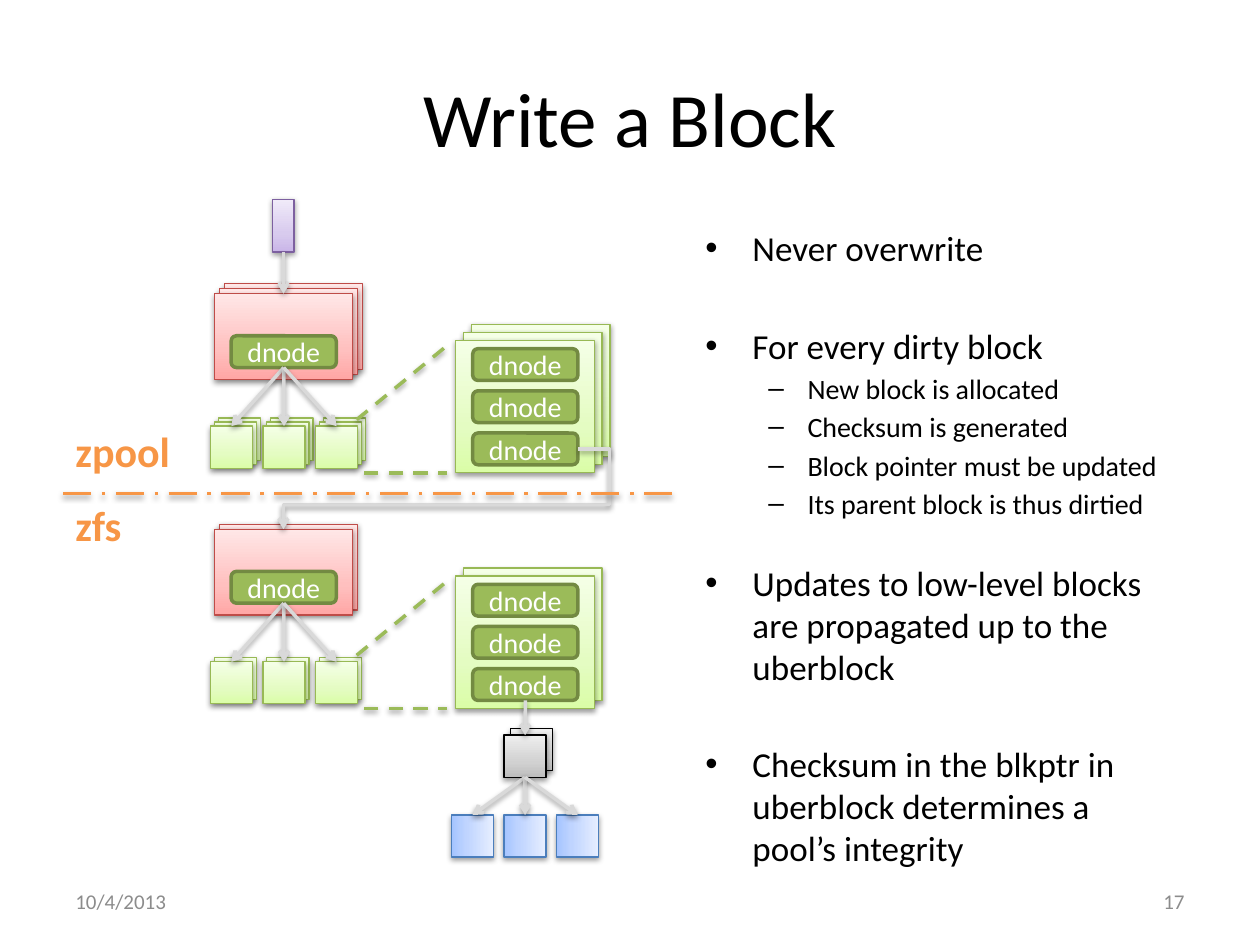
from dataclasses import dataclass

from lxml import etree
from pptx import Presentation
from pptx import util as u
from pptx.dml.color import RGBColor
from pptx.enum import dml, shapes, text
from pptx.oxml import ns


@dataclass(frozen=True)
class Theme:
    """Colours as stops, outline and angle, with type sizes in points."""
    font: str = "Calibri"
    ink: str = "000000"
    white: str = "FFFFFF"
    mute: str = "8C8C8C"
    green: str = "9BBB59"
    rim: str = "738A42"
    arrow: str = "D9D9D9"
    accent: str = "F79646"
    red: tuple = ("FFA6A5", "FFC0BF", "FFE7E7", "BF4C48", 270)
    lime: tuple = ("DAFDA7", "E4FCC2", "F5FFE7", "98B955", 270)
    gray: tuple = ("BDBDBD", "D1D1D1", "EEEEEE", "000000", 270)
    plum: tuple = ("C9B5E8", "D8CBEE", "F0EAF9", "7D60A0", 270)
    blue: tuple = ("A4C4FF", "BFD4FF", "E6EEFF", "4B7EBC", 0)
    title: int = 44
    label: int = 24
    body: int = 20
    small: int = 16
    foot: int = 12


T = Theme()
SIDE = 0.85
PITCH = 1.06


def rgb(tone):
    """Turn a hex string into a colour."""
    return RGBColor.from_string(tone)


def node(parent, tag, **attrs):
    """Append a drawing element to its parent."""
    return etree.SubElement(parent, ns.qn(f"a:{tag}"), {k: str(v) for k, v in attrs.items()})


def shade(shape):
    """Give a shape or connector the soft drop shadow."""
    drop = node(node(shape._element.spPr, "effectLst"), "outerShdw",
                blurRad=40000, dist=20000, dir=5400000, rotWithShape=0)
    node(node(drop, "srgbClr", val=T.ink), "alpha", val=38000)


def write(para, words, size, tone, bold=False):
    """Add one styled run to a paragraph."""
    run = para.add_run()
    run.text = words
    run.font.name, run.font.size, run.font.bold = T.font, u.Pt(size), bold
    run.font.color.rgb = rgb(tone)


def block(slide, box, tone):
    """Draw a rectangle with a three-stop gradient and a shadow."""
    shape = slide.shapes.add_shape(shapes.MSO_SHAPE.RECTANGLE, *map(u.Cm, box))
    *stops, edge, angle = tone
    shape.line.color.rgb = rgb(edge)
    shape.line.width = u.Pt(0.75)
    grad = etree.Element(ns.qn("a:gradFill"), rotWithShape="1")
    row = node(grad, "gsLst")
    for spot, stop in zip((0, 35000, 100000), stops):
        node(node(row, "gs", pos=spot), "srgbClr", val=stop)
    node(grad, "lin", ang=angle * 60000, scaled=0)
    shape._element.spPr.insert(2, grad)
    shade(shape)
    return shape


def stack(slide, box, tone, depth, step):
    """Draw copies stepping up and right behind a front block, which is returned."""
    x, y, w, h = box
    for i in reversed(range(depth)):
        front = block(slide, (x + i * step, y - i * step, w, h), tone)
    return front


def dnode(slide, x, y):
    """Draw one dnode pill."""
    shape = slide.shapes.add_shape(shapes.MSO_SHAPE.ROUNDED_RECTANGLE,
                                   *map(u.Cm, (x, y, 2.12, 0.64)))
    shape.shadow.inherit = False
    shape.fill.solid()
    shape.fill.fore_color.rgb = rgb(T.green)
    shape.line.color.rgb = rgb(T.rim)
    shape.line.width = u.Pt(2)
    shape.text_frame.vertical_anchor = text.MSO_ANCHOR.MIDDLE
    para = shape.text_frame.paragraphs[0]
    para.alignment = text.PP_ALIGN.CENTER
    write(para, "dnode", T.small, T.white)
    return shape


def rule(slide, ends, tone, dash=None):
    """Draw a straight line, dashed on request."""
    line = slide.shapes.add_connector(shapes.MSO_CONNECTOR.STRAIGHT, *map(u.Cm, ends))
    line.line.color.rgb = rgb(tone)
    line.line.width = u.Pt(2)
    if dash:
        line.line.dash_style = dash
    shade(line)


def join(slide, start, end, side=2, bend=()):
    """Draw an arrow from a side of one shape to the top of another."""
    kind = shapes.MSO_CONNECTOR.ELBOW if bend else shapes.MSO_CONNECTOR.STRAIGHT
    link = slide.shapes.add_connector(kind, 0, 0, 0, 0)
    link.begin_connect(start, side)
    link.end_connect(end, 0)
    link.line.color.rgb = rgb(T.arrow)
    link.line.width = u.Pt(2)
    node(link.line._get_or_add_ln(), "tailEnd", type="arrow")
    if bend:
        geom = link._element.spPr.find(ns.qn("a:prstGeom"))
        geom.set("prst", "bentConnector4")
        for old in list(geom):
            geom.remove(old)
        guides = node(geom, "avLst")
        for i, value in enumerate(bend, 1):
            node(guides, "gd", name=f"adj{i}", fmla=f"val {value}")
    shade(link)


def tree(slide, x, y, depth):
    """Draw an object set with its leaves and dnode array; return its ends."""
    head = stack(slide, (x + 0.08, y, 2.79, 1.73), T.red, depth, 0.1)
    root = dnode(slide, x + 0.42, y + 0.85)
    for i in range(3):
        leaf = stack(slide, (x + i * PITCH, y + 2.67, SIDE, SIDE), T.lime, depth, 0.08)
        join(slide, root, leaf)
    stack(slide, (x + 4.95, y + 0.94, 2.79, 2.67), T.lime, depth, 0.16)
    for i in range(3):
        last = dnode(slide, x + 5.29, y + 1.11 + i * SIDE)
    for a, b, c, d in ((2.95, 2.54, 4.72, 1.09), (3.1, 3.61, 4.78, 3.61)):
        rule(slide, (x + a, y + b, x + c, y + d), T.green, dml.MSO_LINE.DASH)
    return head, last


def file(slide, x, y):
    """Draw an indirect block above its three data blocks."""
    top = stack(slide, (x + PITCH, y, SIDE, SIDE), T.gray, 2, 0.13)
    for i in range(3):
        join(slide, top, block(slide, (x + i * PITCH, y + 1.61, SIDE, SIDE), T.blue))
    return top


def label(slide, box, words, size, tone, align="LEFT", bold=False, wrap=True):
    """Place a single line of text, centred in height when it wraps."""
    frame = slide.shapes.add_textbox(*map(u.Cm, box)).text_frame
    frame.word_wrap = wrap
    if wrap:
        frame.vertical_anchor = text.MSO_ANCHOR.MIDDLE
    else:
        frame.auto_size = text.MSO_AUTO_SIZE.SHAPE_TO_FIT_TEXT
    para = frame.paragraphs[0]
    para.alignment = text.PP_ALIGN[align]
    write(para, words, size, tone, bold)


def points(slide, box, items):
    """Place the bullet list from level, space before and wording."""
    frame = slide.shapes.add_textbox(*map(u.Cm, box)).text_frame
    frame.word_wrap = True
    for i, (level, space, words) in enumerate(items):
        para = frame.add_paragraph() if i else frame.paragraphs[0]
        para.level = level
        para.space_before = u.Pt(space)
        left, hang, mark, size = ((0.95, -0.95, "•", T.body), (2.06, -0.79, "–", T.small))[level]
        props = para._p.get_or_add_pPr()
        props.set("marL", str(u.Cm(left)))
        props.set("indent", str(u.Cm(hang)))
        node(props, "buFont", typeface="Arial")
        node(props, "buChar", char=mark)
        write(para, words, size, T.ink)


def main():
    """Build the slide and save it."""
    deck = Presentation()
    deck.slide_width, deck.slide_height = u.Cm(25.4), u.Cm(19.05)
    slide = deck.slides.add_slide(deck.slide_layouts[6])
    label(slide, (1.27, 0.76, 22.86, 3.18), "Write a Block", T.title, T.ink, "CENTER")
    pool, link = tree(slide, 4.24, 5.92, 3)
    join(slide, block(slide, (5.5, 4.02, 0.43, 1.06), T.plum), pool)
    data, last = tree(slide, 4.24, 10.67, 2)
    join(slide, link, data, 3, (-10700, 69500))
    join(slide, last, file(slide, 9.1, 14.82))
    rule(slide, (1.27, 9.95, 13.54, 9.95), T.accent, dml.MSO_LINE.LONG_DASH_DOT)
    label(slide, (1.27, 8.46, 2.44, 1.27), "zpool", T.label, T.accent, bold=True, wrap=False)
    label(slide, (1.27, 9.95, 1.45, 1.27), "zfs", T.label, T.accent, bold=True, wrap=False)
    points(slide, (13.97, 4.45, 9.74, 12.7), (
        (0, 0, "Never overwrite"),
        (0, 31.6, "For every dirty block"),
        (1, 2.8, "New block is allocated"),
        (1, 2.8, "Checksum is generated"),
        (1, 2.8, "Block pointer must be updated"),
        (1, 2.8, "Its parent block is thus dirtied"),
        (0, 23.5, "Updates to low-level blocks are propagated up to the uberblock"),
        (0, 31.6, "Checksum in the blkptr in uberblock determines a pool’s integrity")))
    label(slide, (1.27, 17.65, 5.92, 1.02), "10/4/2013", T.foot, T.mute)
    label(slide, (18.21, 17.65, 5.92, 1.02), "17", T.foot, T.mute, "RIGHT")
    deck.save("out.pptx")


if __name__ == "__main__":
    main()
